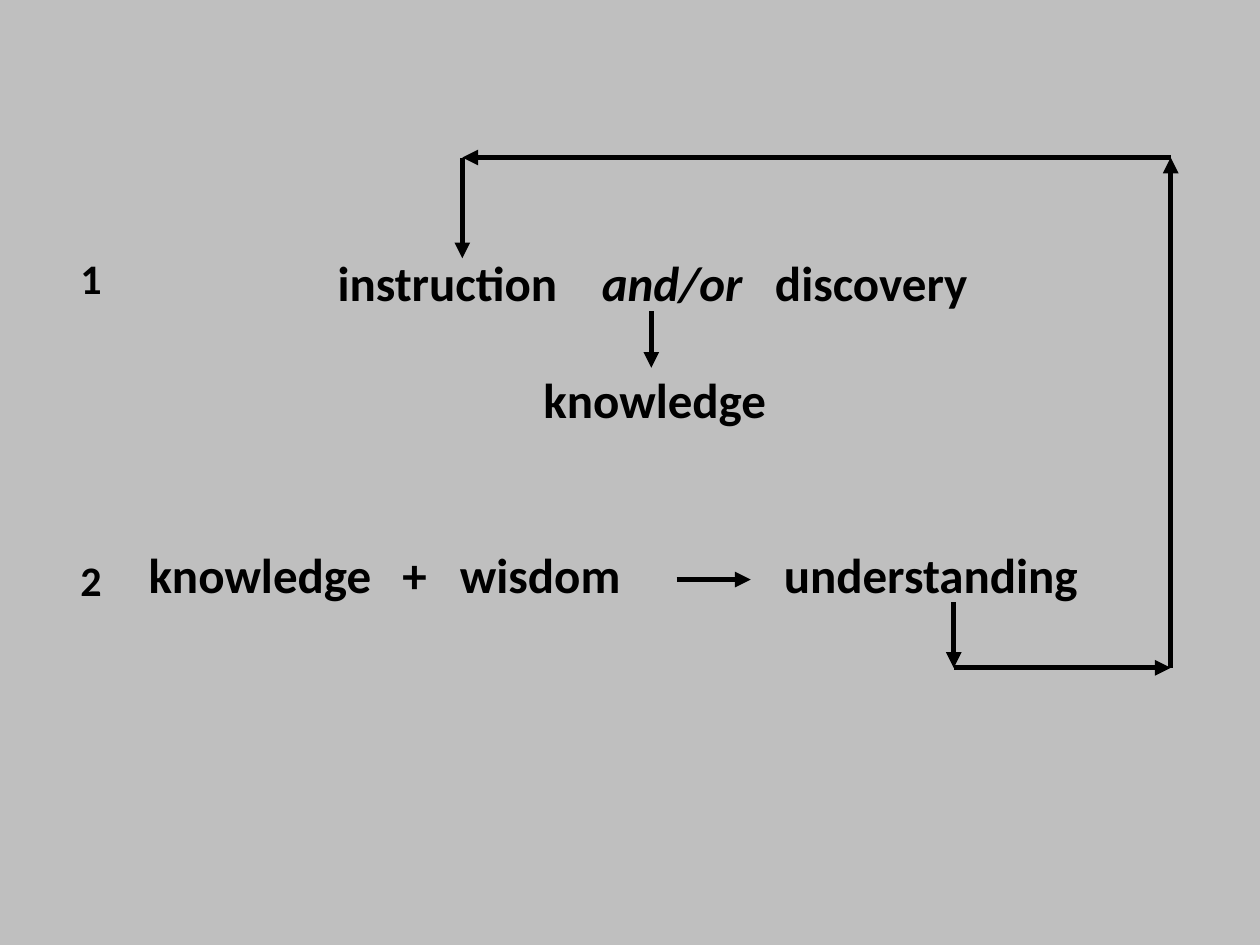
from dataclasses import dataclass

from lxml import etree
from pptx import Presentation
from pptx import util as u
from pptx.dml.color import RGBColor
from pptx.enum import shapes, text
from pptx.oxml.ns import qn


@dataclass
class Theme:
    """Colours, font and sizes of the slide."""

    paper: RGBColor = RGBColor(0xBF, 0xBF, 0xBF)
    ink: RGBColor = RGBColor(0, 0, 0)
    font: str = "Calibri"
    phrase: float = 28
    number: float = 24
    stroke: float = 3


class Diagram:
    """Draws text and arrows on one page in a given theme."""

    def __init__(self, page, theme):
        self.page = page
        self.theme = theme
        fill = page.background.fill
        fill.solid()
        fill.fore_color.rgb = theme.paper

    def text_box(self, left, top, width, height):
        box = self.page.shapes.add_textbox(*map(u.Pt, (left, top, width, height)))
        box.text_frame.word_wrap = True
        box.text_frame.auto_size = text.MSO_AUTO_SIZE.SHAPE_TO_FIT_TEXT
        return box.text_frame

    def line(self, para, spans, size, gap=0, tabs=(), centred=False):
        para.alignment = text.PP_ALIGN.CENTER if centred else text.PP_ALIGN.LEFT
        para.space_before = u.Pt(gap)
        if tabs:
            stops = etree.SubElement(para._p.get_or_add_pPr(), qn("a:tabLst"))
            for stop in tabs:
                etree.SubElement(stops, qn("a:tab"), pos=str(u.Pt(stop)), algn="l")
        para.font.name = self.theme.font
        para.font.size = u.Pt(size)
        para.font.bold = True
        para.font.color.rgb = self.theme.ink
        for words, italic in spans:
            span = para.add_run()
            span.text = words
            if italic:
                span.font.italic = True

    def arrow(self, start, end):
        arrow = self.page.shapes.add_connector(
            shapes.MSO_CONNECTOR.STRAIGHT, *map(u.Pt, (*start, *end))
        )
        arrow.line.color.rgb = self.theme.ink
        arrow.line.width = u.Pt(self.theme.stroke)
        etree.SubElement(arrow.line._get_or_add_ln(), qn("a:tailEnd"), type="triangle")
        etree.SubElement(arrow._element.spPr, qn("a:effectLst"))

    def path_of_arrows(self, points):
        for start, end in zip(points, points[1:]):
            self.arrow(start, end)


def main():
    theme = Theme()
    deck = Presentation()
    deck.slide_width, deck.slide_height = u.Pt(720), u.Pt(540)
    diagram = Diagram(deck.slides.add_slide(deck.slide_layouts[6]), theme)

    top = 141
    phrases = diagram.text_box(77.8, top, 592.6, 254.2)
    sources = [("\tinstruction\t", False), ("and/or\t", True), ("discovery", False)]
    diagram.line(phrases.paragraphs[0], sources, theme.phrase, tabs=(108, 259, 358))
    diagram.line(
        phrases.add_paragraph(), [("knowledge", False)], theme.phrase, 33.2, centred=True
    )
    diagram.line(
        phrases.add_paragraph(),
        [("knowledge\t+\twisdom\tunderstanding", False)],
        theme.phrase,
        66.4,
        tabs=(145, 178, 363),
    )

    diagram.arrow((386.6, 331.2), (429, 331.2))
    diagram.arrow((372.2, 178), (372.2, 210.2))
    left, middle, right = 264.2, 545, 669
    upper, lower = 90, 381.6
    diagram.path_of_arrows(
        [
            (middle, 344.2),
            (middle, lower),
            (right, lower),
            (right, upper),
            (left, upper),
            (left, 147.6),
        ]
    )

    numbers = diagram.text_box(38.9, top, 25.2, 211)
    diagram.line(numbers.paragraphs[0], [("1", False)], theme.number)
    diagram.line(numbers.add_paragraph(), [("2", False)], theme.number, 143.3)
    deck.save("out.pptx")


if __name__ == "__main__":
    main()
